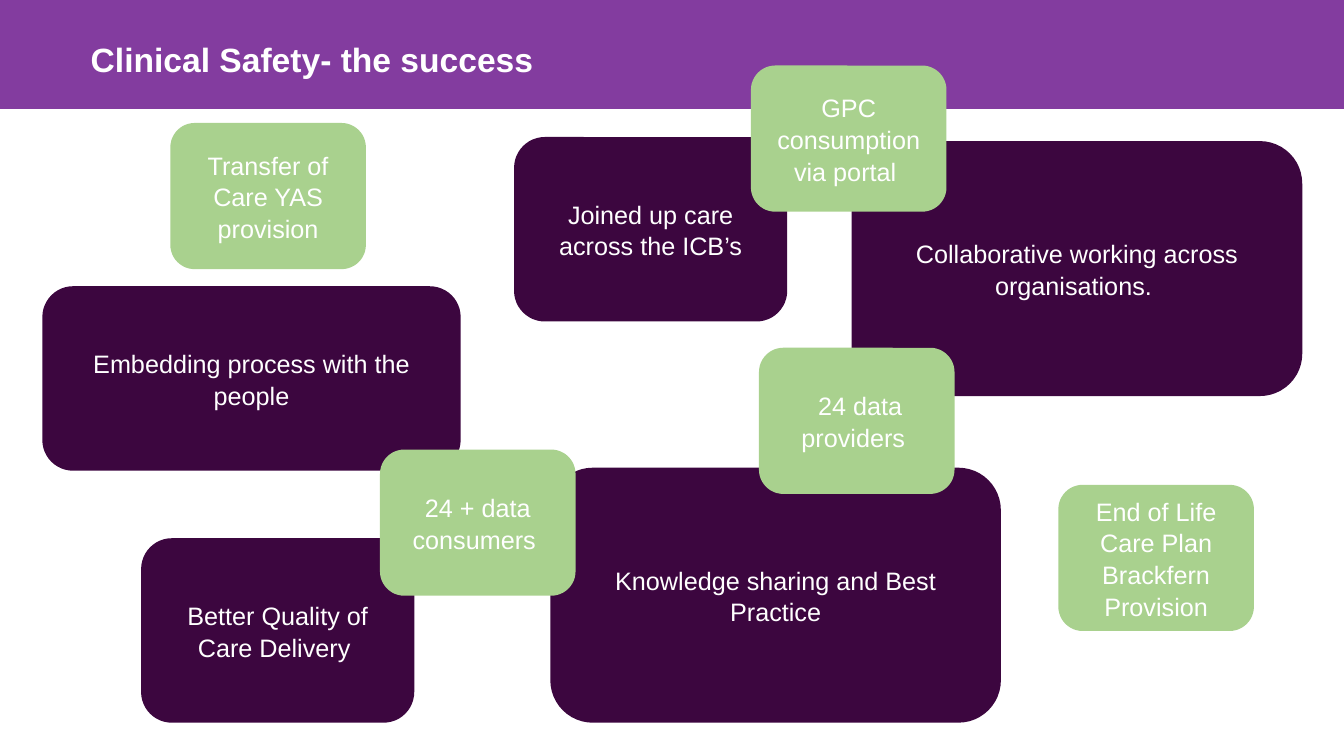
"""Build the clinical safety success slide."""
from dataclasses import dataclass, field

import pptx
import pptx.dml.color
import pptx.enum.shapes
import pptx.enum.text
import pptx.shapes.autoshape
import pptx.slide
import pptx.util

Pt = pptx.util.Pt
ShapeKind = pptx.enum.shapes.MSO_SHAPE
Anchor = pptx.enum.text.MSO_ANCHOR
Align = pptx.enum.text.PP_ALIGN


@dataclass(frozen=True)
class Theme:
    """Colours, type and spacing of the slide."""

    band: str = "833C9F"
    outcome: str = "3C063F"
    service: str = "A9D18E"
    text: str = "FFFFFF"
    font: str = "Arial"
    title_format: dict = field(default_factory=lambda: {"size": Pt(24), "bold": True})
    card_format: dict = field(default_factory=lambda: {"size": Pt(18), "bold": False})
    card_spacing: float = 1.05


@dataclass(frozen=True)
class Size:
    """Width and height in points."""

    width: float
    height: float


@dataclass(frozen=True)
class Card:
    """A rounded box with its top left corner in points."""

    text: str
    left: float
    top: float
    size: Size
    colour: str


THEME = Theme()
PAGE = Size(960, 540)
LARGE = Size(321.84, 182.16)
WIDE = Size(298.8, 131.76)
MEDIUM = Size(195.12, 131.76)
SMALL = Size(139.68, 104.4)

CARDS = [
    Card("Collaborative working across organisations. ", 608.4, 100.8, LARGE, THEME.outcome),
    Card("Embedding process with the people", 30.24, 204.48, WIDE, THEME.outcome),
    Card("Knowledge sharing and Best Practice", 393.12, 334.08, LARGE, THEME.outcome),
    Card("Better Quality of Care Delivery ", 100.8, 384.48, MEDIUM, THEME.outcome),
    Card("Joined up care across the ICB’s", 367.2, 97.92, MEDIUM, THEME.outcome),
    Card("Transfer of Care YAS provision", 121.68, 87.84, SMALL, THEME.service),
    Card("End of Life Care Plan Brackfern Provision", 756, 346.32, SMALL, THEME.service),
    Card(" 24 data providers ", 542.16, 248.4, SMALL, THEME.service),
    Card("24 + data consumers ", 271.44, 321.12, SMALL, THEME.service),
    Card("GPC consumption via portal ", 536.4, 46.8, SMALL, THEME.service),
]


def apply(target: object, values: dict) -> None:
    """Set each named attribute of the target."""
    for name, value in values.items():
        setattr(target, name, value)


def colour_of(code: str) -> pptx.dml.color.RGBColor:
    """Turn a hex code into a colour."""
    return pptx.dml.color.RGBColor.from_string(code)


def write_text(
    box: pptx.shapes.autoshape.Shape, text: str, anchor: Anchor, para_format: dict, font_format: dict
) -> None:
    """Put one formatted paragraph into a box."""
    apply(box.text_frame, {"word_wrap": True, "vertical_anchor": anchor})
    para = box.text_frame.paragraphs[0]
    apply(para, para_format)
    span = para.add_run()
    span.text = text
    apply(span.font, {"name": THEME.font, **font_format})
    span.font.color.rgb = colour_of(THEME.text)


def add_box(
    page: pptx.slide.Slide, kind: ShapeKind, left: float, top: float, size: Size, colour: str
) -> pptx.shapes.autoshape.Shape:
    """Add a plain filled shape."""
    box = page.shapes.add_shape(kind, Pt(left), Pt(top), Pt(size.width), Pt(size.height))
    box.shadow.inherit = False
    box.fill.solid()
    box.fill.fore_color.rgb = colour_of(colour)
    box.line.fill.background()
    return box


def add_header(page: pptx.slide.Slide) -> None:
    """Set the title on a coloured band."""
    title = page.shapes.title
    apply(title, {"left": Pt(57.6), "top": Pt(24.48), "width": Pt(812.88), "height": Pt(36)})
    write_text(
        title, "Clinical Safety- the success", Anchor.TOP, {"alignment": Align.LEFT}, THEME.title_format
    )
    band = add_box(page, ShapeKind.RECTANGLE, 0, 0, Size(PAGE.width, 77.76), THEME.band)
    title.element.addprevious(band.element)


def add_card(page: pptx.slide.Slide, card: Card) -> None:
    """Add a rounded box with centred text."""
    box = add_box(page, ShapeKind.ROUNDED_RECTANGLE, card.left, card.top, card.size, card.colour)
    para_format = {"alignment": Align.CENTER, "line_spacing": THEME.card_spacing}
    write_text(box, card.text, Anchor.MIDDLE, para_format, THEME.card_format)


def main() -> None:
    """Build and save the deck."""
    deck = pptx.Presentation()
    apply(deck, {"slide_width": Pt(PAGE.width), "slide_height": Pt(PAGE.height)})
    page = deck.slides.add_slide(deck.slide_layouts.get_by_name("Title Only"))
    add_header(page)
    for card in CARDS:
        add_card(page, card)
    deck.save("out.pptx")


if __name__ == "__main__":
    main()
